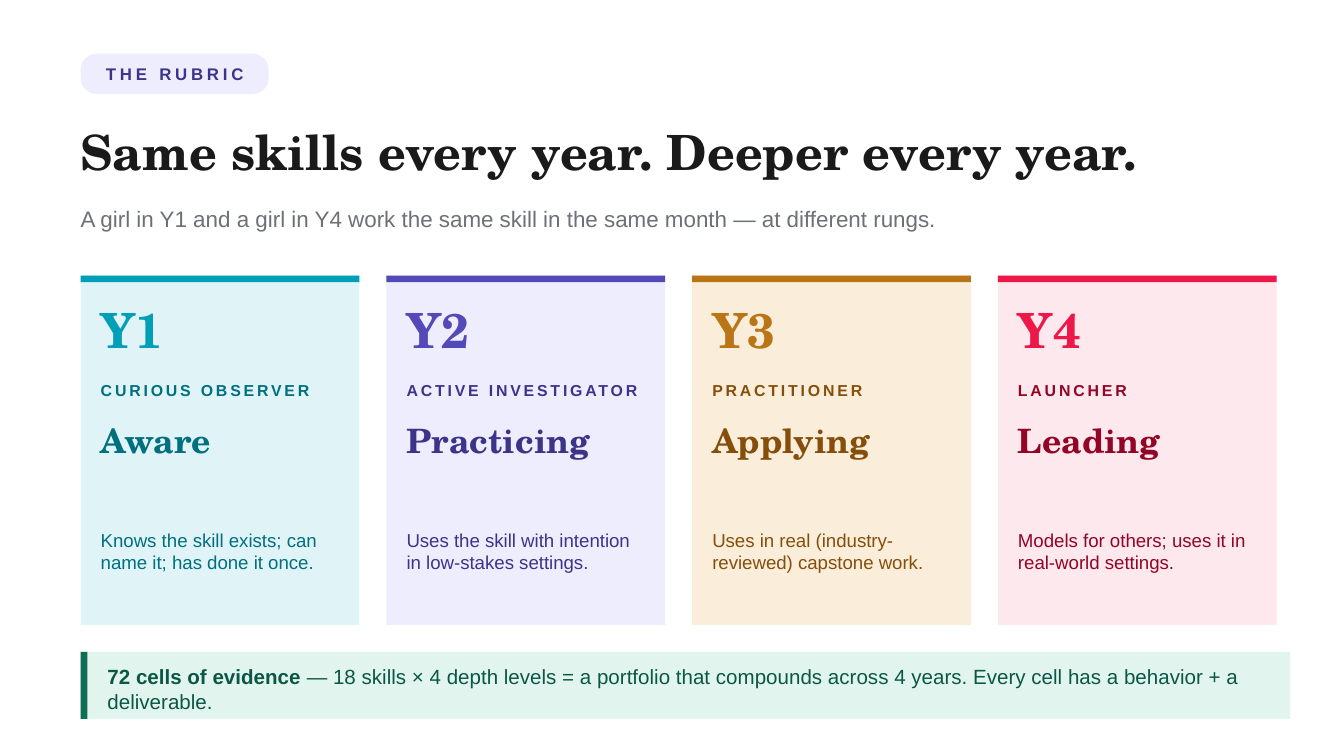
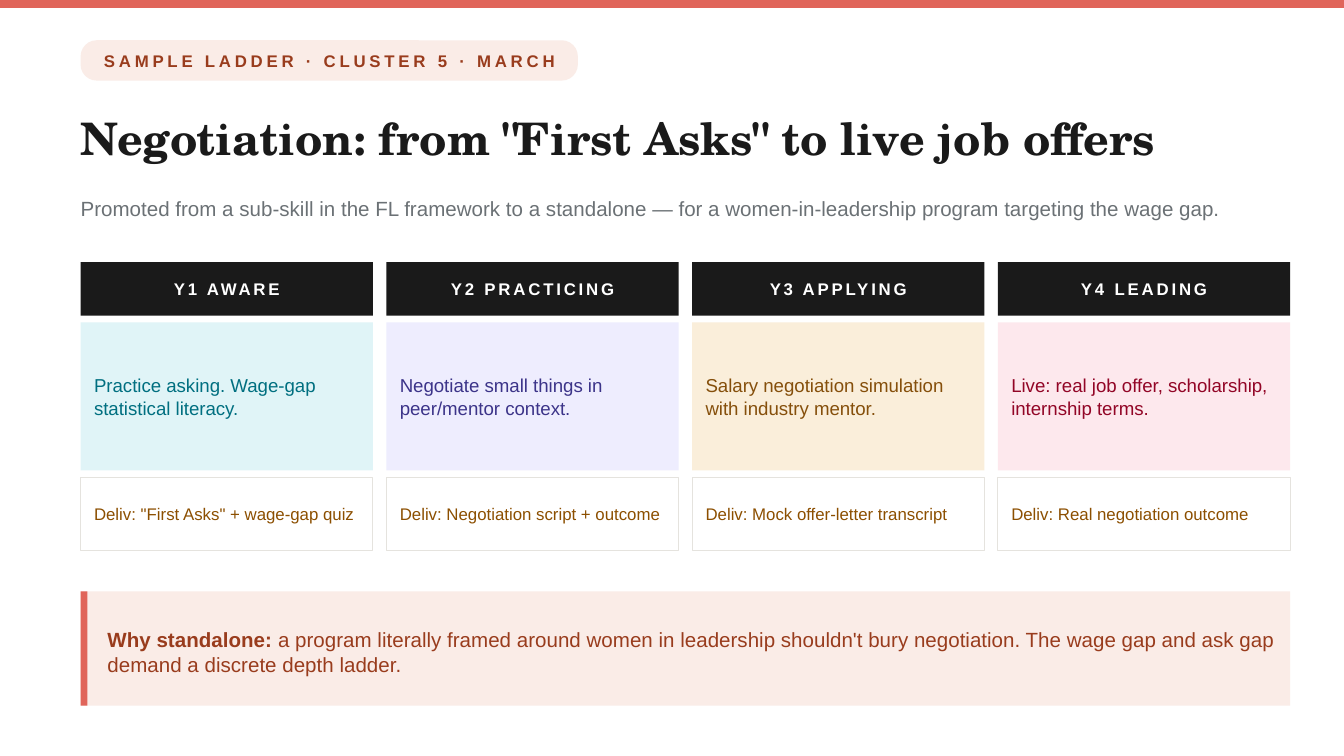
import collections

import pptx
import pptx.dml.color
import pptx.enum.shapes
import pptx.enum.text
import pptx.util

Inches = pptx.util.Inches
RGBColor = pptx.dml.color.RGBColor
Shapes = pptx.enum.shapes.MSO_SHAPE
Align = pptx.enum.text.PP_ALIGN

INK = RGBColor(0x1A, 0x1A, 0x1A)
GRAY = RGBColor(0x6B, 0x71, 0x75)
WHITE = RGBColor(0xFF, 0xFF, 0xFF)
RULE = RGBColor(0xE5, 0xE3, 0xDE)
BROWN = RGBColor(0x8C, 0x4F, 0x00)

# Each palette: pale background, strong accent, dark text.
Palette = collections.namedtuple("Palette", "pale accent dark")
TEAL = Palette(RGBColor(0xE0, 0xF4, 0xF7), RGBColor(0x00, 0x9F, 0xB7), RGBColor(0x00, 0x6F, 0x80))
VIOLET = Palette(RGBColor(0xEE, 0xED, 0xFE), RGBColor(0x53, 0x4A, 0xB7), RGBColor(0x3C, 0x34, 0x89))
AMBER = Palette(RGBColor(0xFA, 0xEE, 0xDA), RGBColor(0xBA, 0x75, 0x17), RGBColor(0x85, 0x4F, 0x0B))
ROSE = Palette(RGBColor(0xFD, 0xE8, 0xED), RGBColor(0xED, 0x18, 0x49), RGBColor(0x92, 0x05, 0x26))
GREEN = Palette(RGBColor(0xE1, 0xF5, 0xEE), RGBColor(0x0F, 0x6E, 0x56), RGBColor(0x0A, 0x57, 0x43))
CORAL = Palette(RGBColor(0xFA, 0xEC, 0xE7), RGBColor(0xE0, 0x65, 0x5A), RGBColor(0x99, 0x3C, 0x1D))

SANS = "Arial"
SERIF = "TeX Gyre Schola"

SLIDE_WIDTH = 10
SLIDE_HEIGHT = SLIDE_WIDTH * 9 / 16
MARGIN = 0.6
CONTENT_WIDTH = 9
COLUMN_GAP = 0.1
COLUMN_PITCH = (CONTENT_WIDTH + COLUMN_GAP) / 4
COLUMN_WIDTH = COLUMN_PITCH - COLUMN_GAP
STRIPE = 0.05

Year = collections.namedtuple("Year", "name role level meaning practice deliverable palette")
YEARS = [
    Year("Y1", "CURIOUS OBSERVER", "Aware",
         "Knows the skill exists; can name it; has done it once.",
         "Practice asking. Wage-gap statistical literacy.",
         'Deliv: "First Asks" + wage-gap quiz', TEAL),
    Year("Y2", "ACTIVE INVESTIGATOR", "Practicing",
         "Uses the skill with intention in low-stakes settings.",
         "Negotiate small things in peer/mentor context.",
         "Deliv: Negotiation script + outcome", VIOLET),
    Year("Y3", "PRACTITIONER", "Applying",
         "Uses in real (industry-reviewed) capstone work.",
         "Salary negotiation simulation with industry mentor.",
         "Deliv: Mock offer-letter transcript", AMBER),
    Year("Y4", "LAUNCHER", "Leading",
         "Models for others; uses it in real-world settings.",
         "Live: real job offer, scholarship, internship terms.",
         "Deliv: Real negotiation outcome", ROSE),
]


class Deck:
    """Holds the presentation, the shared style and the current slide."""

    def __init__(self):
        self.presentation = pptx.Presentation()
        self.presentation.slide_width = Inches(SLIDE_WIDTH)
        self.presentation.slide_height = Inches(SLIDE_HEIGHT)
        self.slide = None

    def new_slide(self):
        self.slide = self.presentation.slides.add_slide(self.presentation.slide_layouts[6])

    def block(self, left, top, width, height, fill, line=None, kind=Shapes.RECTANGLE):
        shape = self.slide.shapes.add_shape(
            kind, Inches(left), Inches(top), Inches(width), Inches(height))
        shape.shadow.inherit = False
        shape.fill.solid()
        shape.fill.fore_color.rgb = fill
        if line is None:
            shape.line.fill.background()
        else:
            shape.line.color.rgb = line
            shape.line.width = pptx.util.Pt(0.5)
        return shape

    def text(self, left, top, width, height, words, size, color,
             font=SANS, bold=False, align=Align.LEFT, spacing=0, lead=""):
        """Add a text box; lead is a bold opening, spacing is in points."""
        box = self.slide.shapes.add_textbox(
            Inches(left), Inches(top), Inches(width), Inches(height))
        frame = box.text_frame
        frame.word_wrap = True
        frame.vertical_anchor = pptx.enum.text.MSO_ANCHOR.MIDDLE
        frame.margin_left = frame.margin_right = frame.margin_top = frame.margin_bottom = 0
        paragraph = frame.paragraphs[0]
        paragraph.alignment = align
        paragraph.font.name = font
        paragraph.font.size = pptx.util.Pt(size)
        paragraph.font.bold = bold
        paragraph.font.color.rgb = color
        if lead:
            run = paragraph.add_run()
            run.text = lead
            run.font.bold = True
        run = paragraph.add_run()
        run.text = words
        if spacing:
            run._r.get_or_add_rPr().set("spc", str(int(spacing * 100)))

    def pill(self, top, width, words, palette):
        place = (MARGIN, top, width, 0.3)
        shape = self.block(*place, palette.pale, kind=Shapes.ROUNDED_RECTANGLE)
        shape.adjustments[0] = 0.4
        self.text(*place, words, 9, palette.dark, bold=True, align=Align.CENTER, spacing=2)

    def title(self, top, words, size):
        self.text(MARGIN, top, CONTENT_WIDTH, 0.55, words, size, INK, SERIF, bold=True)

    def subtitle(self, top, height, words, size):
        self.text(MARGIN, top, CONTENT_WIDTH, height, words, size, GRAY)

    def callout(self, top, height, lead, words, palette):
        self.block(MARGIN, top, CONTENT_WIDTH, height, palette.pale)
        self.block(MARGIN, top, STRIPE, height, palette.accent)
        self.text(MARGIN + 0.2, top + 0.1, CONTENT_WIDTH - 0.3, height - 0.15,
                  words, 11, palette.dark, lead=lead)

    def year_card(self, left, year):
        palette = year.palette
        width = COLUMN_WIDTH - 0.1
        self.block(left, 2.05, width, 2.6, palette.pale)
        self.block(left, 2.05, width, STRIPE, palette.accent)
        inner = left + 0.15
        width -= 0.3
        self.text(inner, 2.2, width, 0.5, year.name, 26, palette.accent, SERIF, bold=True)
        self.text(inner, 2.75, width, 0.3, year.role, 8.5, palette.dark, bold=True, spacing=1.5)
        self.text(inner, 3.05, width, 0.45, year.level, 18, palette.dark, SERIF, bold=True)
        self.text(inner, 3.6, width, 1, year.meaning, 10, palette.dark)

    def ladder_column(self, left, year):
        header = (left, 1.95, COLUMN_WIDTH, 0.4)
        self.block(*header, INK)
        self.text(*header, f"{year.name} {year.level.upper()}", 9, WHITE,
                  bold=True, align=Align.CENTER, spacing=1.5)
        inner = left + 0.1
        width = COLUMN_WIDTH - 0.2
        self.block(left, 2.4, COLUMN_WIDTH, 1.1, year.palette.pale)
        self.text(inner, 2.45, width, 1, year.practice, 10, year.palette.dark)
        self.block(left, 3.55, COLUMN_WIDTH, 0.55, WHITE, line=RULE)
        self.text(inner, 3.6, width, 0.45, year.deliverable, 9, BROWN)


def each_column(draw):
    for index, year in enumerate(YEARS):
        draw(MARGIN + index * COLUMN_PITCH, year)


def build_rubric(deck):
    deck.new_slide()
    deck.pill(0.4, 1.4, "THE RUBRIC", VIOLET)
    deck.title(0.85, "Same skills every year. Deeper every year.", 26)
    deck.subtitle(1.45, 0.35, "A girl in Y1 and a girl in Y4 work the same skill "
                  "in the same month — at different rungs.", 12)
    each_column(deck.year_card)
    deck.callout(4.85, 0.5, "72 cells of evidence ",
                 "— 18 skills × 4 depth levels = a portfolio that compounds across 4 years. "
                 "Every cell has a behavior + a deliverable.", GREEN)


def build_ladder(deck):
    deck.new_slide()
    deck.block(0, 0, SLIDE_WIDTH, 0.06, CORAL.accent)
    deck.pill(0.3, 3.7, "SAMPLE LADDER · CLUSTER 5 · MARCH", CORAL)
    deck.title(0.75, 'Negotiation: from "First Asks" to live job offers', 24)
    deck.subtitle(1.35, 0.4, "Promoted from a sub-skill in the FL framework to a standalone — "
                  "for a women-in-leadership program targeting the wage gap.", 11)
    each_column(deck.ladder_column)
    deck.callout(4.4, 0.85, "Why standalone: ",
                 "a program literally framed around women in leadership shouldn't bury "
                 "negotiation. The wage gap and ask gap demand a discrete depth ladder.", CORAL)


def main():
    deck = Deck()
    build_rubric(deck)
    build_ladder(deck)
    deck.presentation.save("out.pptx")


if __name__ == "__main__":
    main()
